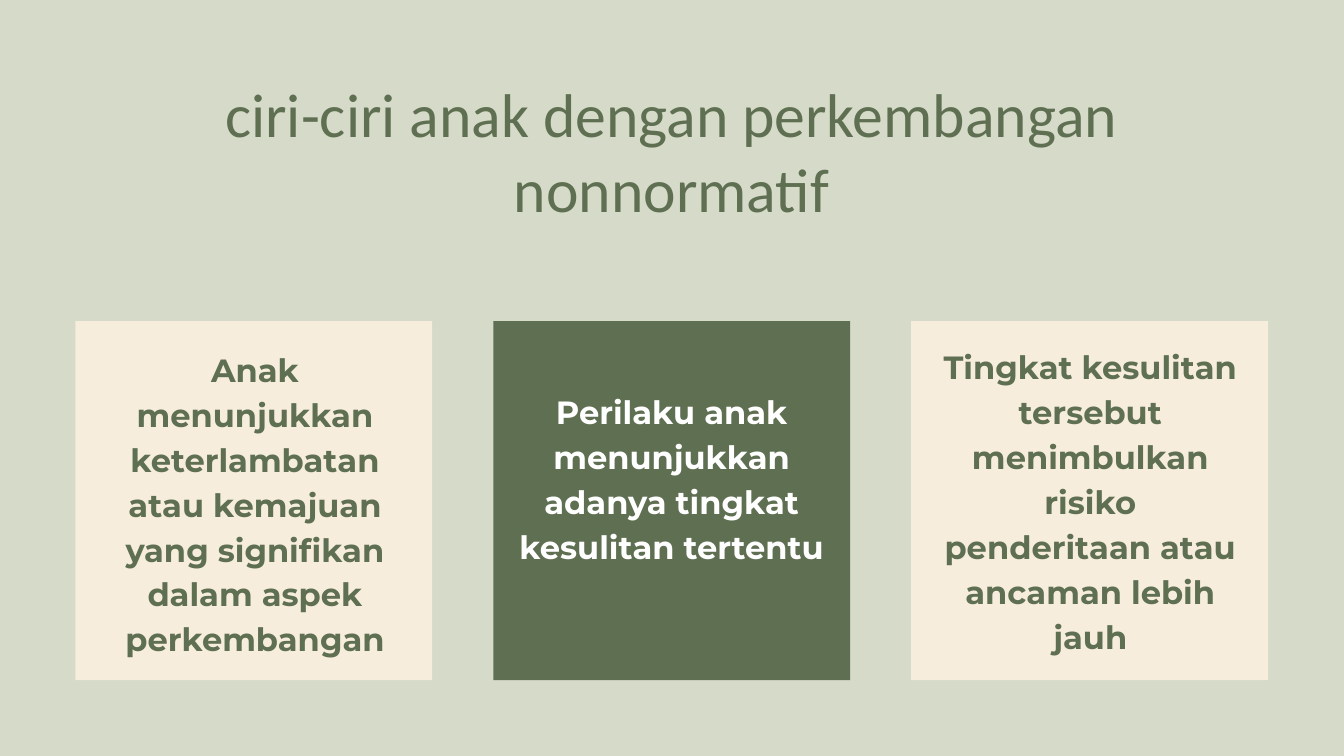
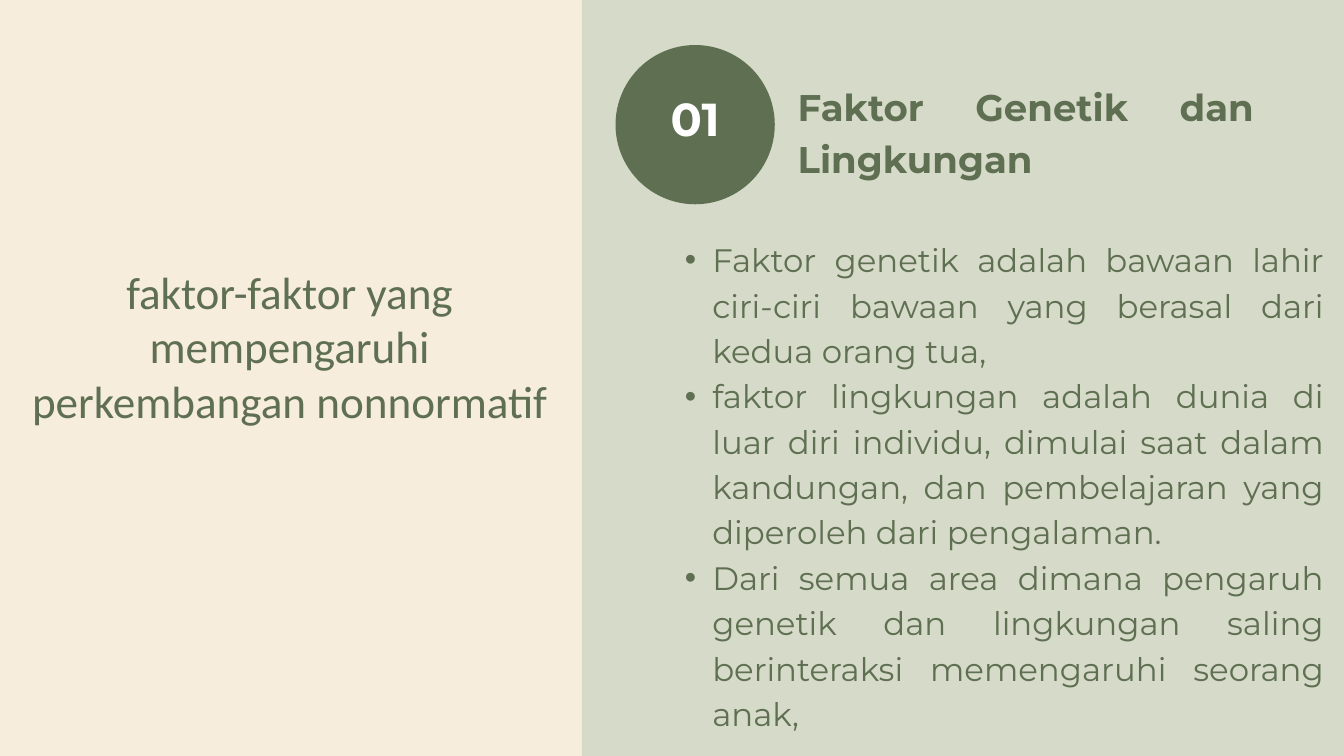
"""Build two slides on non-normative child development."""
from dataclasses import dataclass

import pptx
import pptx.dml.color
import pptx.enum.shapes
import pptx.enum.text
import pptx.util
from pptx.util import Inches

SAGE, CREAM, MOSS, WHITE = "D6DAC8", "F6EDDD", "5F6F52", "FFFFFF"
ALIGN = pptx.enum.text.PP_ALIGN
ANCHOR = pptx.enum.text.MSO_ANCHOR
SHAPE = pptx.enum.shapes.MSO_SHAPE
TITLE_AND_LIST, TITLE_ONLY = 1, 5
CARD_LEFT, CARD_TOP, CARD_STEP = 1.12, 4.78, 6.22
CARD_WIDTH, CARD_HEIGHT = 5.31, 5.34
CARD_TEXT_WIDTH = 4.53


@dataclass(frozen=True)
class Area:
    left: float
    top: float
    width: float
    height: float

    def lengths(self):
        return [Inches(side) for side in (self.left, self.top, self.width, self.height)]


@dataclass(frozen=True)
class Style:
    size: float
    spacing: float
    font: str = "Montserrat"
    color: str = MOSS
    bold: bool = False
    align: ALIGN = ALIGN.CENTER


@dataclass(frozen=True)
class Card:
    text: str
    fill: str
    color: str
    text_left: float
    text_top: float
    text_height: float


CARDS = (
    Card("Anak menunjukkan keterlambatan atau kemajuan yang signifikan dalam aspek perkembangan",
         CREAM, MOSS, 1.53, 5.12, 4.66),
    Card("Perilaku anak menunjukkan adanya tingkat kesulitan tertentu",
         MOSS, WHITE, 7.73, 5.75, 2.64),
    Card("Tingkat kesulitan tersebut menimbulkan risiko penderitaan atau ancaman lebih jauh",
         CREAM, MOSS, 13.96, 5.08, 3.99),
)
FACTORS = (
    "Faktor genetik adalah bawaan lahir ciri-ciri bawaan yang berasal dari kedua orang tua,",
    "faktor lingkungan adalah dunia di luar diri individu, dimulai saat dalam kandungan, "
    "dan pembelajaran yang diperoleh dari pengalaman.",
    "Dari semua area dimana pengaruh genetik dan lingkungan saling berinteraksi "
    "memengaruhi seorang anak,",
)


def paint(fill, color: str) -> None:
    fill.solid()
    fill.fore_color.rgb = pptx.dml.color.RGBColor.from_string(color)


def add_slide(deck, layout: int, background: str):
    page = deck.slides.add_slide(deck.slide_layouts[layout])
    paint(page.background.fill, background)
    return page


def add_block(page, kind: SHAPE, area: Area, color: str):
    block = page.shapes.add_shape(kind, *area.lengths())
    block.shadow.inherit = False
    block.line.fill.background()
    paint(block.fill, color)
    return block


def write(box, texts: tuple[str, ...], style: Style, anchor: ANCHOR = ANCHOR.TOP) -> None:
    frame = box.text_frame
    frame.word_wrap = True
    frame.auto_size = pptx.enum.text.MSO_AUTO_SIZE.NONE
    frame.vertical_anchor = anchor
    frame.margin_left = frame.margin_top = frame.margin_right = frame.margin_bottom = 0
    for index, text in enumerate(texts):
        para = frame.add_paragraph() if index else frame.paragraphs[0]
        para.alignment = style.align
        para.line_spacing = pptx.util.Pt(style.spacing)
        para.space_before = pptx.util.Pt(0)
        span = para.add_run()
        span.text = text
        span.font.name = style.font
        span.font.size = pptx.util.Pt(style.size)
        span.font.bold = style.bold
        span.font.color.rgb = pptx.dml.color.RGBColor.from_string(style.color)


def add_text(page, area: Area, text: str, style: Style, anchor: ANCHOR = ANCHOR.TOP) -> None:
    write(page.shapes.add_textbox(*area.lengths()), (text,), style, anchor)


def fill_placeholder(box, area: Area, texts: tuple[str, ...], style: Style) -> None:
    box.left, box.top, box.width, box.height = area.lengths()
    write(box, texts, style)


def indent_list(box, margin: float, hanging: float) -> None:
    for para in box.text_frame.paragraphs:
        properties = para._p.get_or_add_pPr()
        properties.set("marL", str(Inches(margin)))
        properties.set("indent", str(-Inches(hanging)))


def build_traits(deck) -> None:
    page = add_slide(deck, TITLE_ONLY, SAGE)
    fill_placeholder(page.shapes.title, Area(1.12, 1.12, 17.75, 2.2),
                     ("ciri-ciri anak dengan perkembangan nonnormatif",),
                     Style(66.1, 80, font="Calibri"))
    for index, card in enumerate(CARDS):
        left = CARD_LEFT + index * CARD_STEP
        add_block(page, SHAPE.RECTANGLE, Area(left, CARD_TOP, CARD_WIDTH, CARD_HEIGHT), card.fill)
        text_area = Area(card.text_left, card.text_top, CARD_TEXT_WIDTH, card.text_height)
        add_text(page, text_area, card.text, Style(34.4, 48.1, color=card.color, bold=True))


def build_factors(deck) -> None:
    page = add_slide(deck, TITLE_AND_LIST, CREAM)
    panel = add_block(page, SHAPE.RECTANGLE, Area(8.66, 0, 11.34, 11.25), SAGE)
    title, factor_list = page.shapes.title, page.placeholders[1]
    title.element.addprevious(panel.element)
    fill_placeholder(title, Area(0.23, 3.92, 8.16, 3.24),
                     ("faktor-faktor yang mempengaruhi perkembangan nonnormatif",),
                     Style(48.4, 58.5, font="Calibri"))
    fill_placeholder(factor_list, Area(9.78, 3.48, 9.92, 7.31), FACTORS,
                     Style(34.7, 48.6, align=ALIGN.JUSTIFY))
    indent_list(factor_list, 0.82, 0.41)
    add_block(page, SHAPE.OVAL, Area(9.16, 0.67, 2.37, 2.37), MOSS)
    add_text(page, Area(9.38, 0.58, 1.93, 2.23), "01",
             Style(49.5, 69.3, color=WHITE, bold=True), ANCHOR.MIDDLE)
    add_text(page, Area(11.87, 1.15, 6.79, 1.51), "Faktor Genetik dan Lingkungan",
             Style(39.7, 55.6, bold=True, align=ALIGN.JUSTIFY))


def main() -> None:
    deck = pptx.Presentation()
    deck.slide_width, deck.slide_height = Inches(20), Inches(11.25)
    build_traits(deck)
    build_factors(deck)
    deck.save("out.pptx")


if __name__ == "__main__":
    main()
